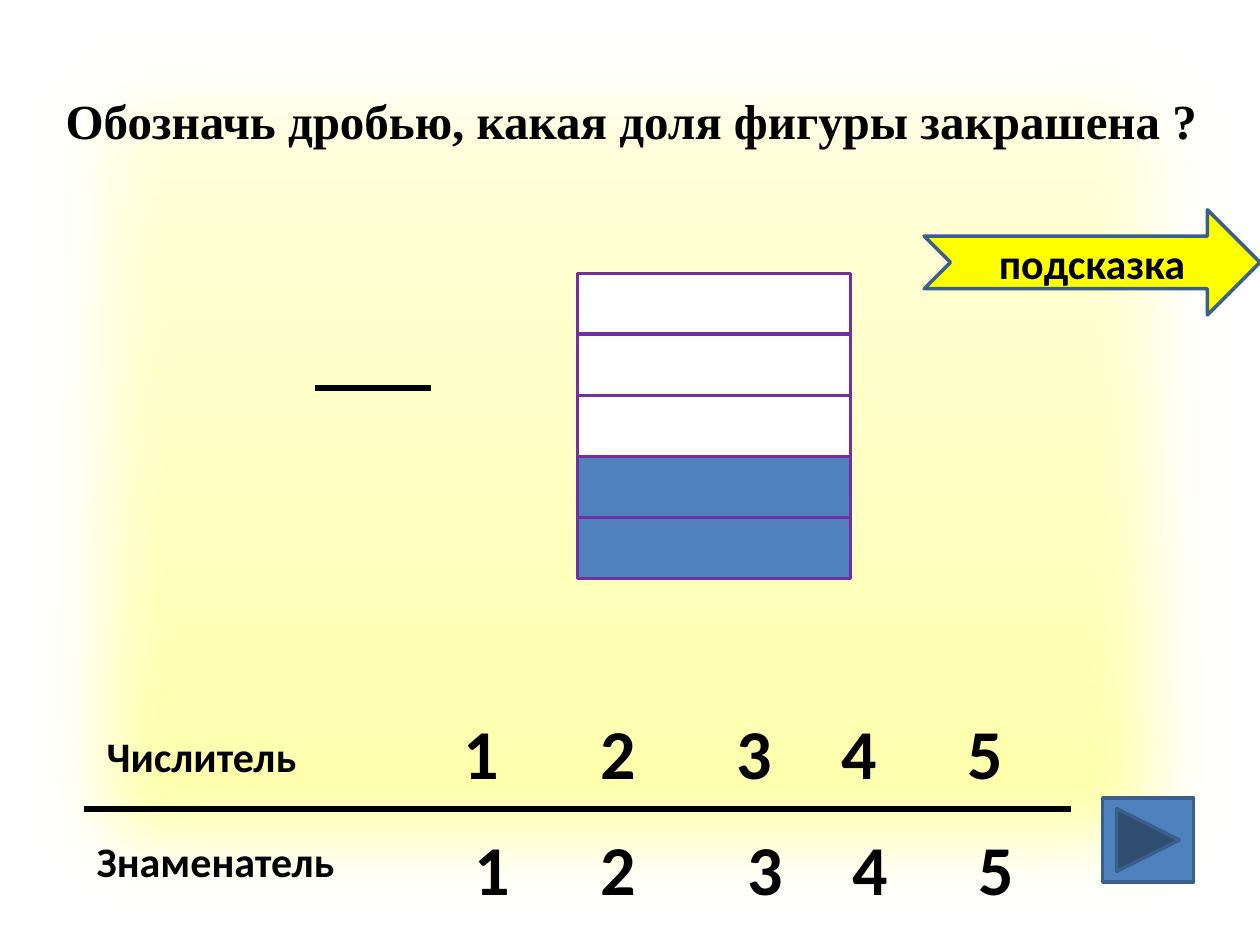
from copy import deepcopy

from lxml.etree import SubElement
from pptx import Presentation
from pptx.dml.color import RGBColor
from pptx.enum.shapes import MSO_CONNECTOR as Connector, MSO_SHAPE as Shape
from pptx.enum.text import MSO_ANCHOR as Anchor, MSO_AUTO_SIZE as AutoSize, PP_ALIGN as Align
from pptx.oxml.ns import qn
from pptx.util import Cm, Pt


def color(value):
    return RGBColor.from_string(value)


def write(shape, text, size=24, font="Calibri", align=Align.LEFT, anchor=Anchor.TOP,
          wrap=True, fit=AutoSize.SHAPE_TO_FIT_TEXT):
    frame = shape.text_frame
    frame.word_wrap = wrap
    frame.auto_size = fit
    frame.vertical_anchor = anchor
    para = frame.paragraphs[0]
    para.alignment = align
    span = para.add_run()
    span.text = text
    span.font.size = Pt(size)
    span.font.name = font
    span.font.bold = True
    span.font.color.rgb = color("000000")


deck = Presentation()
deck.slide_width, deck.slide_height = Cm(25.4), Cm(19.05)
page = deck.slides.add_slide(deck.slide_layouts[5])
shapes = page.shapes

blocks = [
    (Shape.RECTANGLE, 0, 0, 25.4, 19.05, None, "3A5F8C"),
    (Shape.ACTION_BUTTON_FORWARD_OR_NEXT, 22.23, 16.09, 1.83, 1.69, "4F81BD", "3A5F8C"),
    (Shape.NOTCHED_RIGHT_ARROW, 18.63, 4.23, 6.77, 2.12, "FFFF00", "3A5F8C"),
]
strip_fills = ["FFFFFF"] * 3 + ["4F81BD"] * 2
strip_height = 1.23
for index, fill in enumerate(strip_fills):
    top = 5.51 + index * strip_height
    blocks.append((Shape.RECTANGLE, 11.64, top, 5.51, strip_height, fill, "7030A0"))

drawn = []
for kind, left, top, width, height, fill, line in blocks:
    box = shapes.add_shape(kind, Cm(left), Cm(top), Cm(width), Cm(height))
    box.shadow.inherit = False
    box.line.color.rgb = color(line)
    box.line.width = Pt(2)
    if fill:
        box.fill.solid()
        box.fill.fore_color.rgb = color(fill)
    drawn.append(box)
background, button, arrow = drawn[:3]

background.fill.gradient()
background.fill.gradient_angle = 90
properties = background._element.spPr
stop_list = properties.find(".//" + qn("a:gsLst"))
stop_list.append(deepcopy(stop_list[0]))
gradient = [(0, "FFFFA0"), (0.5, "FFFFC5"), (1, "FFFFE3")]
for stop, (position, value) in zip(background.fill.gradient_stops, gradient):
    stop.position = position
    stop.color.rgb = color(value)
effects = properties.find(qn("a:effectLst"))
SubElement(effects, qn("a:softEdge"), rad=str(Pt(50)))

write(arrow, "подсказка", align=Align.CENTER, anchor=Anchor.MIDDLE, fit=AutoSize.NONE)

for start, end, top in [(6.35, 8.69, 7.82), (1.7, 21.59, 16.31)]:
    bar = shapes.add_connector(Connector.STRAIGHT, Cm(start), Cm(top), Cm(end), Cm(top))
    bar.line.color.rgb = color("000000")
    bar.line.width = Pt(3)
    SubElement(bar._element.spPr, qn("a:effectLst"))

rows = [
    ("Числитель", 1.9, 14.6, 5.51, 14.17, [9.09, 11.86, 14.6, 16.71, 19.25]),
    ("Знаменатель", 1.7, 16.71, 7.42, 16.51, [9.32, 11.86, 14.81, 16.94, 19.48]),
]
for label, left, top, width, digit_top, digit_lefts in rows:
    box = shapes.add_textbox(Cm(left), Cm(top), Cm(width), Cm(1.27))
    write(box, label)
    for digit, digit_left in enumerate(digit_lefts, 1):
        box = shapes.add_textbox(Cm(digit_left), Cm(digit_top), Cm(1.3), Cm(1.96))
        write(box, str(digit), size=40)

title = shapes.title
title.left, title.top, title.width, title.height = Cm(1.07), Cm(1.7), Cm(23.8), Cm(1.45)
write(title, "Обозначь дробью, какая доля фигуры закрашена ?", size=28,
      font="Times New Roman", wrap=False)
shapes._spTree.append(title._element)

deck.save("out.pptx")
